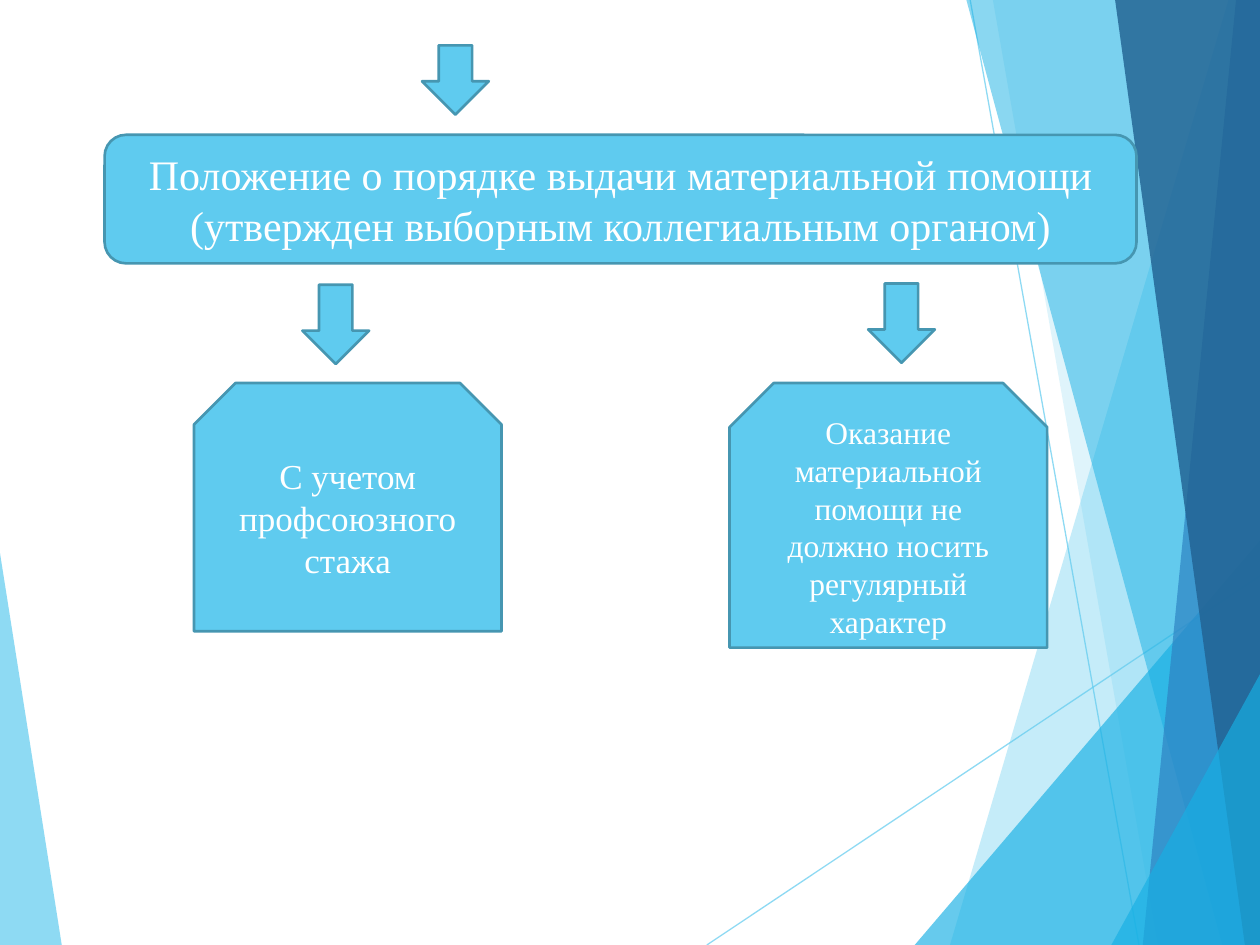
import pptx
import pptx.util
import pptx.dml.color
import pptx.enum.shapes
import pptx.enum.text
import pptx.oxml
import pptx.oxml.ns
from pptx.util import Inches

SHAPES = pptx.enum.shapes.MSO_SHAPE
FONT = "Times New Roman"
COLORS = {
    "sky": "5FCBEF",
    "cyan": "17B0E4",
    "blue": "2E83C3",
    "navy": "226292",
    "outline": "4696B1",
    "text": "FFFFFF",
}


def color(name):
    return pptx.dml.color.RGBColor.from_string(COLORS[name])


def set_opacity(shape, percent):
    """Make the only colour of a shape or line partly transparent."""
    for srgb in shape._element.spPr.iter(pptx.oxml.ns.qn("a:srgbClr")):
        alpha = pptx.oxml.parse_xml(
            f'<a:alpha {pptx.oxml.ns.nsdecls("a")} val="{percent * 1000}"/>')
        srgb.append(alpha)


def add_facet(slide, points, fill, opacity):
    corners = [(Inches(x), Inches(y)) for x, y in points]
    builder = slide.shapes.build_freeform(*corners[0])
    builder.add_line_segments(corners[1:], close=True)
    facet = builder.convert_to_shape()
    facet.shadow.inherit = False
    facet.fill.solid()
    facet.fill.fore_color.rgb = color(fill)
    facet.line.fill.background()
    set_opacity(facet, opacity)


def add_ray(slide, start, end):
    ray = slide.shapes.add_connector(
        pptx.enum.shapes.MSO_CONNECTOR.STRAIGHT,
        *(Inches(value) for value in start + end))
    ray.line.color.rgb = color("sky")
    ray.line.width = pptx.util.Pt(0.75)
    set_opacity(ray, 70)
    ray._element.spPr.append(pptx.oxml.parse_xml(
        f'<a:effectLst {pptx.oxml.ns.nsdecls("a")}/>'))


def add_backdrop(slide, width, height):
    """Translucent facets along the left and right edges of the slide."""
    add_ray(slide, (5.61, height), (width, 4.57))
    add_ray(slide, (7.7, 0), (9.04, height))

    add_facet(slide, [(0, 4.39), (0.49, height), (0, height)], "sky", 70)

    # Right-hand facets: x at the top, x at the bottom, fill, opacity;
    # a triangle starts from its height on the right edge instead
    bands = [
        (9.75, 7.54, "sky", 36),
        (7.88, 9.19, "sky", 20),
        ("triangle", 4.29, 7.26, "cyan", 66),
        (7.67, 9.7, "cyan", 50),
        (9.81, 9.07, "blue", 70),
        (8.85, 9.88, "navy", 82),
        ("triangle", 5.35, 8.82, "cyan", 66),
    ]
    for *edge, fill, opacity in bands:
        if edge[0] == "triangle":
            _, top, left = edge
            points = [(left, height), (width, top), (width, height)]
        else:
            top_x, bottom_x = edge
            points = [(top_x, 0), (bottom_x, height),
                      (width, height), (width, 0)]
        add_facet(slide, points, fill, opacity)


def add_block(slide, preset, box, lines=(), size=18):
    """Outlined block with centred text, placed in box (inches)."""
    block = slide.shapes.add_shape(preset, *(Inches(value) for value in box))
    block.shadow.inherit = False
    block.fill.solid()
    block.fill.fore_color.rgb = color("sky")
    block.line.color.rgb = color("outline")
    block.line.width = pptx.util.Pt(1.5)
    if not lines:
        return
    frame = block.text_frame
    frame.word_wrap = True
    frame.vertical_anchor = pptx.enum.text.MSO_ANCHOR.MIDDLE
    frame.text = "\n".join(lines)
    for paragraph in frame.paragraphs:
        paragraph.alignment = pptx.enum.text.PP_ALIGN.CENTER
        for run in paragraph.runs:
            run.font.name = FONT
            run.font.size = pptx.util.Pt(size)
            run.font.color.rgb = color("text")


def add_scheme(slide):
    """Regulation block with the two conditions that follow from it."""
    # Arrows
    for left, top, height in [(3.35, 0.36, 0.55), (2.4, 2.26, 0.63),
                              (6.89, 2.25, 0.63)]:
        add_block(slide, SHAPES.DOWN_ARROW, (left, top, 0.53, height))

    # Regulation
    add_block(slide, SHAPES.ROUNDED_RECTANGLE, (0.83, 1.07, 8.19, 1.02),
              ["Положение о порядке выдачи материальной помощи",
               "(утвержден выборным коллегиальным органом)"], 24)

    # Conditions
    add_block(slide, SHAPES.SNIP_2_SAME_RECTANGLE, (1.54, 3.04, 2.44, 1.97),
              ["С учетом профсоюзного стажа"], 20)
    add_block(slide, SHAPES.SNIP_2_SAME_RECTANGLE, (5.79, 3.04, 2.52, 2.1),
              ["Оказание материальной помощи не должно носить "
               "регулярный характер"], 18)


def main():
    deck = pptx.Presentation()
    deck.slide_width, deck.slide_height = Inches(10), Inches(7.5)
    slide = deck.slides.add_slide(deck.slide_layouts[6])
    add_backdrop(slide, 10, 7.5)
    add_scheme(slide)
    deck.save("out.pptx")


if __name__ == "__main__":
    main()
